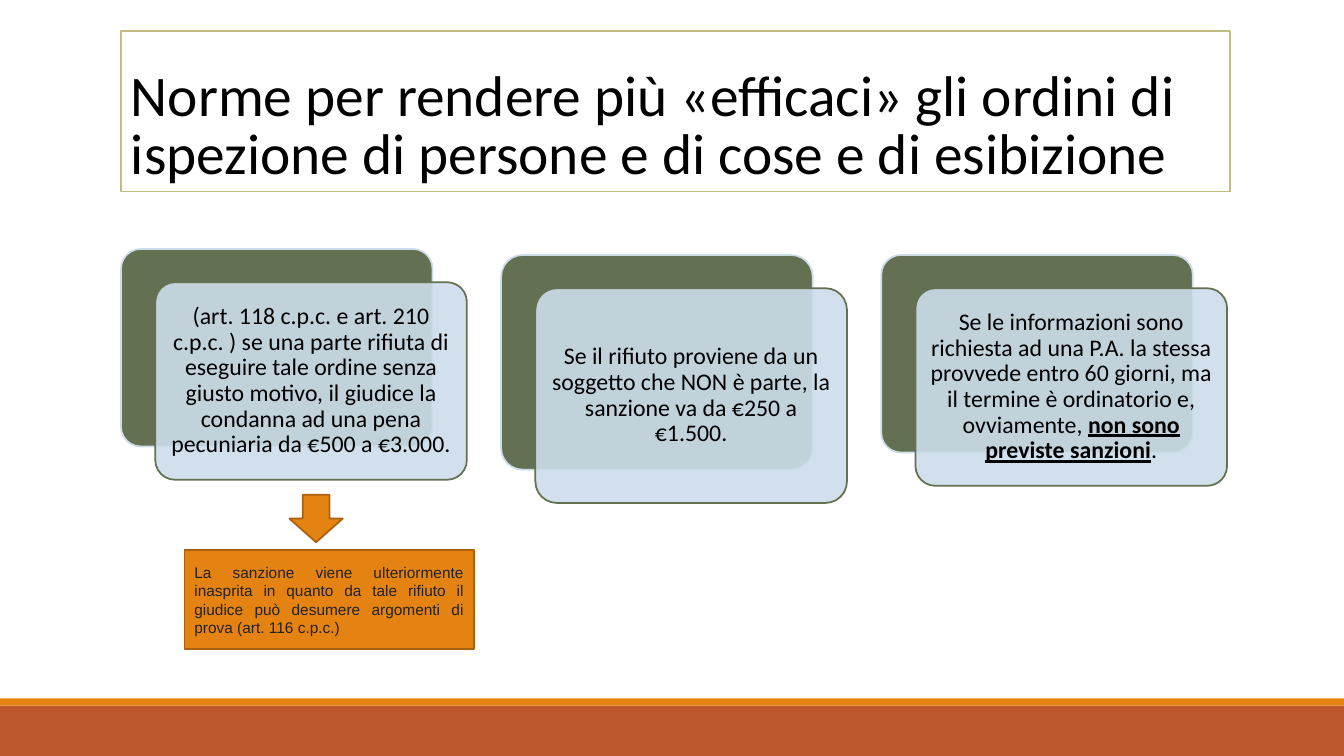
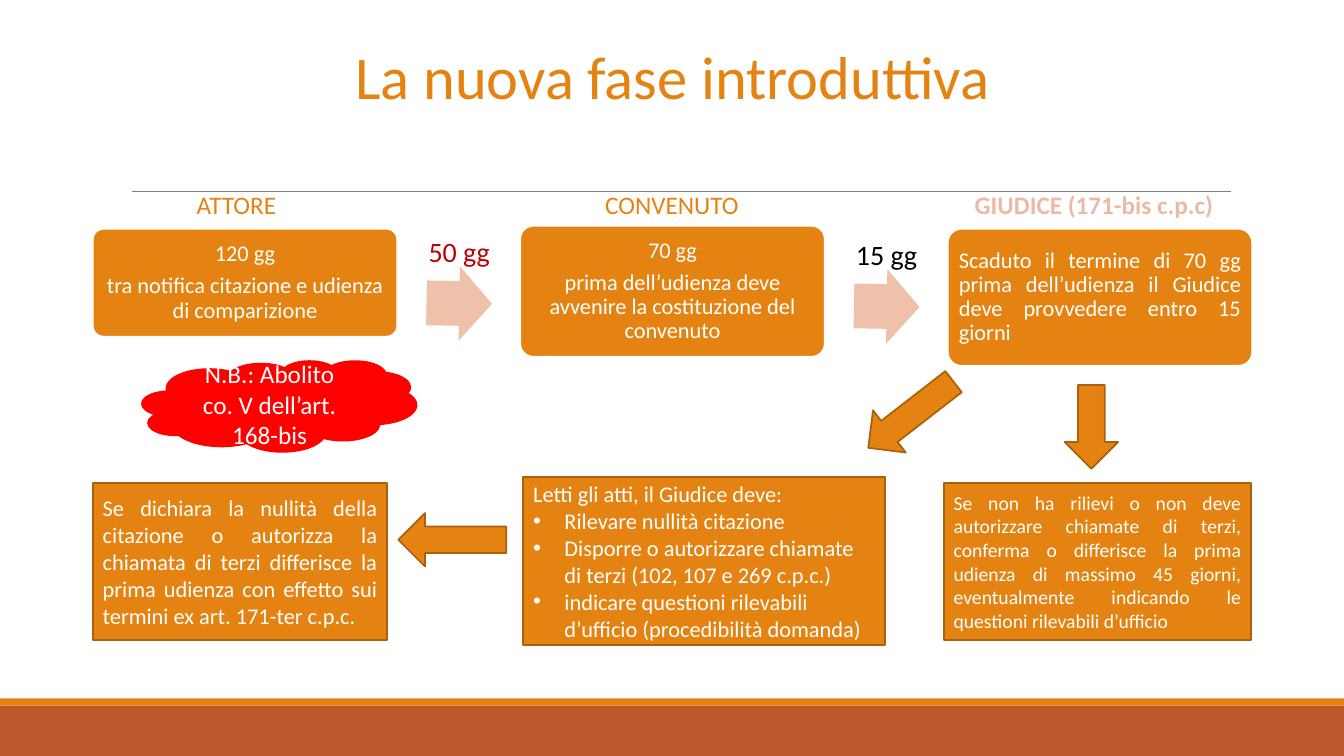
from lxml import etree
from pptx import Presentation
from pptx.dml.color import RGBColor
from pptx.enum.shapes import MSO_CONNECTOR, MSO_SHAPE
from pptx.enum.text import MSO_ANCHOR, PP_ALIGN
from pptx.oxml.ns import qn
from pptx.util import Inches, Pt

RECT, ROUNDED, CLOUD = MSO_SHAPE.RECTANGLE, MSO_SHAPE.ROUNDED_RECTANGLE, MSO_SHAPE.CLOUD
DOWN, RIGHT_ARROW = MSO_SHAPE.DOWN_ARROW, MSO_SHAPE.RIGHT_ARROW
LEFT, CENTER, JUSTIFY = PP_ALIGN.LEFT, PP_ALIGN.CENTER, PP_ALIGN.JUSTIFY
TOP, MIDDLE, BOTTOM = MSO_ANCHOR.TOP, MSO_ANCHOR.MIDDLE, MSO_ANCHOR.BOTTOM

ORANGE, DARK_ORANGE, RUST = "E48312", "A9610D", "BD582C"
GREEN, PALE_BLUE, SAND = "637052", "CCDDEA", "C2BC80"
PEACH, PALE_RUST, GRAY = "EFC1AB", "EABAA5", "808080"
WHITE, BLACK, INK = "FFFFFF", "000000", "222222"
RED, DARK_RED = "FF0000", "C00000"
SLIDE_WIDTH, SLIDE_HEIGHT = 13.33, 7.5


def color(code):
    return RGBColor.from_string(code)


# Basic parts; a box is (left, top, width, height) in inches
def add_block(page, kind, box, fill, line=None, weight=1.25, turn=0):
    block = page.shapes.add_shape(kind, *map(Inches, box))
    block.shadow.inherit = False
    block.fill.solid()
    block.fill.fore_color.rgb = color(fill)
    if line:
        block.line.color.rgb = color(line)
        block.line.width = Pt(weight)
    else:
        block.line.fill.background()
    if kind == ROUNDED:
        block.adjustments[0] = 0.1
    block.rotation = turn
    return block


def write(shape, paragraphs, size, ink, align=CENTER, anchor=MIDDLE, font="Calibri",
          spacing=None, after=0, margin=None, wrap=True):
    """Each paragraph is a list of runs: (text, emphasised)."""
    frame = shape.text_frame
    frame.word_wrap = wrap
    frame.vertical_anchor = anchor
    if margin is not None:
        frame.margin_left = frame.margin_right = Inches(margin)
        frame.margin_top = frame.margin_bottom = Inches(margin)
    for index, runs in enumerate(paragraphs):
        para = frame.add_paragraph() if index else frame.paragraphs[0]
        para.alignment = align
        para.space_after = Pt(after)
        if spacing:
            para.line_spacing = spacing
        for text, emphasised in runs:
            span = para.add_run()
            span.text = text
            span.font.name = font
            span.font.size = Pt(size)
            span.font.color.rgb = color(ink)
            span.font.bold = span.font.underline = emphasised
    return frame


def plain(*texts):
    return [[(text, False)] for text in texts]


def add_label(page, box, text, size, ink, align=CENTER):
    label = page.shapes.add_textbox(*map(Inches, box))
    return write(label, plain(text), size, ink, align, TOP, wrap=False)


def add_note(page, box, texts, size, **style):
    note = add_block(page, RECT, box, ORANGE, DARK_ORANGE)
    style = {"ink": WHITE, "align": JUSTIFY, **style}
    return write(note, plain(*texts), size, **style)


def add_arrow(page, left, top, height, turn=0):
    add_block(page, DOWN, (left, top, 0.53, height), ORANGE, DARK_ORANGE, turn=turn)


def add_bullet(para):
    properties = para._p.get_or_add_pPr()
    properties.set("marL", str(Inches(0.31)))
    properties.set("indent", str(-Inches(0.31)))
    etree.SubElement(properties, qn("a:buFont")).set("typeface", "Arial")
    etree.SubElement(properties, qn("a:buChar")).set("char", "•")


def outline_text(span, ink, weight):
    line = etree.Element(qn("a:ln"), w=str(Pt(weight)))
    fill = etree.SubElement(line, qn("a:solidFill"))
    etree.SubElement(fill, qn("a:srgbClr")).set("val", ink)
    span._r.get_or_add_rPr().insert(0, line)


def set_opacity(shape, percent):
    tint = shape._element.spPr.find(qn("a:solidFill"))[0]
    etree.SubElement(tint, qn("a:alpha")).set("val", str(percent * 1000))


# Shared frame: footer bands, rule and title
def add_page(deck):
    page = deck.slides.add_slide(deck.slide_layouts[6])
    add_block(page, RECT, (0, 7, SLIDE_WIDTH, 0.5), RUST)
    add_block(page, RECT, (0, 6.93, SLIDE_WIDTH, 0.07), ORANGE)
    rule = page.shapes.add_connector(
        MSO_CONNECTOR.STRAIGHT, Inches(1.31), Inches(1.9), Inches(12.21), Inches(1.9))
    rule.line.color.rgb = color(GRAY)
    rule.line.width = Pt(0.5)
    etree.SubElement(rule._element.spPr, qn("a:effectLst"))
    return page


def add_title(page, box, text, size, ink, align, border=None):
    title = page.shapes.add_textbox(*map(Inches, box))
    if border:
        title.fill.solid()
        title.fill.fore_color.rgb = color(WHITE)
        title.line.color.rgb = color(border)
        title.line.width = Pt(1.25)
    write(title, plain(text), size, ink, align, BOTTOM, spacing=0.85)


# Slide 1: three layered cards
def add_layered_card(page, box, runs):
    left, top, width, height = box
    add_block(page, ROUNDED, box, GREEN, PALE_BLUE)
    front = add_block(page, ROUNDED, (left + 0.34, top + 0.33, width, height),
                      PALE_BLUE, GREEN)
    set_opacity(front, 90)
    write(front, [runs], 17, BLACK, spacing=0.9, margin=0.07)


def build_orders(deck):
    page = add_page(deck)
    add_title(page, (1.2, 0.31, 11, 1.59),
              "Norme per rendere più «efficaci» gli ordini di ispezione di persone "
              "e di cose e di esibizione", 41, BLACK, LEFT, SAND)
    cards = [
        (2.47, 1.96, [("(art. 118 c.p.c. e art. 210 c.p.c. ) se una parte rifiuta di "
                       "eseguire tale ordine senza giusto motivo, il giudice la condanna "
                       "ad una pena pecuniaria da €500 a €3.000.", False)]),
        (2.53, 2.13, [("Se il rifiuto proviene da un soggetto che NON è parte, la "
                       "sanzione va da €250 a €1.500.", False)]),
        (2.53, 1.96, [("Se le informazioni sono richiesta ad una P.A. la stessa provvede "
                       "entro 60 giorni, ma il termine è ordinatorio e, ovviamente, ", False),
                      ("non sono previste sanzioni", True), (".", False)]),
    ]
    for column, (top, height, runs) in enumerate(cards):
        add_layered_card(page, (1.2 + 3.77 * column, top, 3.09, height), runs)

    # Consequence of the first card
    add_arrow(page, 2.87, 4.91, 0.47)
    add_note(page, (1.83, 5.46, 2.87, 0.98),
             ["La sanzione viene ulteriormente inasprita in quanto da tale rifiuto il "
              "giudice può desumere argomenti di prova (art. 116 c.p.c.)"],
             11, ink=INK, font="Arial")


# Slide 2: timeline of the introductory phase
def add_step(page, box, texts, align):
    step = add_block(page, ROUNDED, box, ORANGE, WHITE)
    write(step, plain(*texts), 16, WHITE, align, spacing=0.9, after=5.6, margin=0.07)


def add_interval(page, left, top, text, ink, align):
    arrow = add_block(page, RIGHT_ARROW, (left, top, 0.65, 0.74), PEACH, turn=1)
    arrow.adjustments[0] = 0.6
    add_label(page, (left - 0.08, top - 0.36, 0.81, 0.44), text, 20, ink, align)


def add_timeline(page, left, pitch):
    steps = [
        (2.27, 1.07, ["120 gg", "tra notifica citazione e udienza di comparizione"], CENTER),
        (2.24, 1.3, ["70 gg", "prima dell’udienza deve avvenire la costituzione del "
                     "convenuto"], CENTER),
        (2.27, 1.36, ["Scaduto il termine di 70 gg prima dell’udienza il Giudice deve "
                      "provvedere entro 15 giorni"], JUSTIFY),
    ]
    for column, (top, height, texts, align) in enumerate(steps):
        add_step(page, (left + pitch * column, top, 3.02, height), texts, align)

    intervals = [(2.64, "50 gg", DARK_RED, CENTER), (2.67, "15 gg", BLACK, LEFT)]
    for column, (top, text, ink, align) in enumerate(intervals):
        add_interval(page, left + 3.31 + pitch * column, top, text, ink, align)

    add_label(page, (1.24, 1.83, 2.21, 0.4), "ATTORE", 18, ORANGE)
    add_label(page, (5.56, 1.83, 2.21, 0.4), "CONVENUTO", 18, ORANGE)
    judge = add_label(page, (9.36, 1.83, 2.98, 0.4), "GIUDICE (171-bis c.p.c)", 18, PALE_RUST)
    span = judge.paragraphs[0].runs[0]
    span.font.bold = True
    outline_text(span, RUST, 1.75)


def add_outcomes(page):
    add_arrow(page, 10.56, 3.82, 0.83)
    add_arrow(page, 8.77, 3.58, 1.07, turn=52.2)
    add_arrow(page, 4.22, 4.82, 1.07, turn=90)
    add_note(page, (9.36, 4.79, 3.05, 1.56),
             ["Se non ha rilievi o non deve autorizzare chiamate di terzi, conferma o "
              "differisce la prima udienza di massimo 45 giorni, eventualmente indicando "
              "le questioni rilevabili d’ufficio"], 14)
    duties = add_note(page, (5.19, 4.73, 3.59, 1.67),
                      ["Letti gli atti, il Giudice deve:",
                       "Rilevare nullità citazione",
                       "Disporre o autorizzare chiamate di terzi (102, 107 e 269 c.p.c.)",
                       "indicare questioni rilevabili d’ufficio (procedibilità domanda)"],
                      16, align=LEFT)
    for para in duties.paragraphs[1:]:
        add_bullet(para)
    add_note(page, (0.92, 4.79, 2.92, 1.56),
             ["Se dichiara la nullità della citazione o autorizza la chiamata di terzi "
              "differisce la prima udienza con effetto sui termini ex art. 171-ter c.p.c."],
             16)


def build_introduction(deck):
    page = add_page(deck)
    add_title(page, (0.92, 0.4, 11.5, 0.76), "La nuova fase introduttiva",
              43.2, ORANGE, CENTER)
    add_timeline(page, 0.92, 4.24)
    add_outcomes(page)
    cloud = add_block(page, CLOUD, (1.41, 3.58, 2.72, 0.9), RED, RED)
    write(cloud, plain("N.B.: Abolito co. V dell’art. 168-bis"), 18, WHITE)


def main():
    deck = Presentation()
    deck.slide_width = Inches(SLIDE_WIDTH)
    deck.slide_height = Inches(SLIDE_HEIGHT)
    build_orders(deck)
    build_introduction(deck)
    deck.save("out.pptx")


if __name__ == "__main__":
    main()
